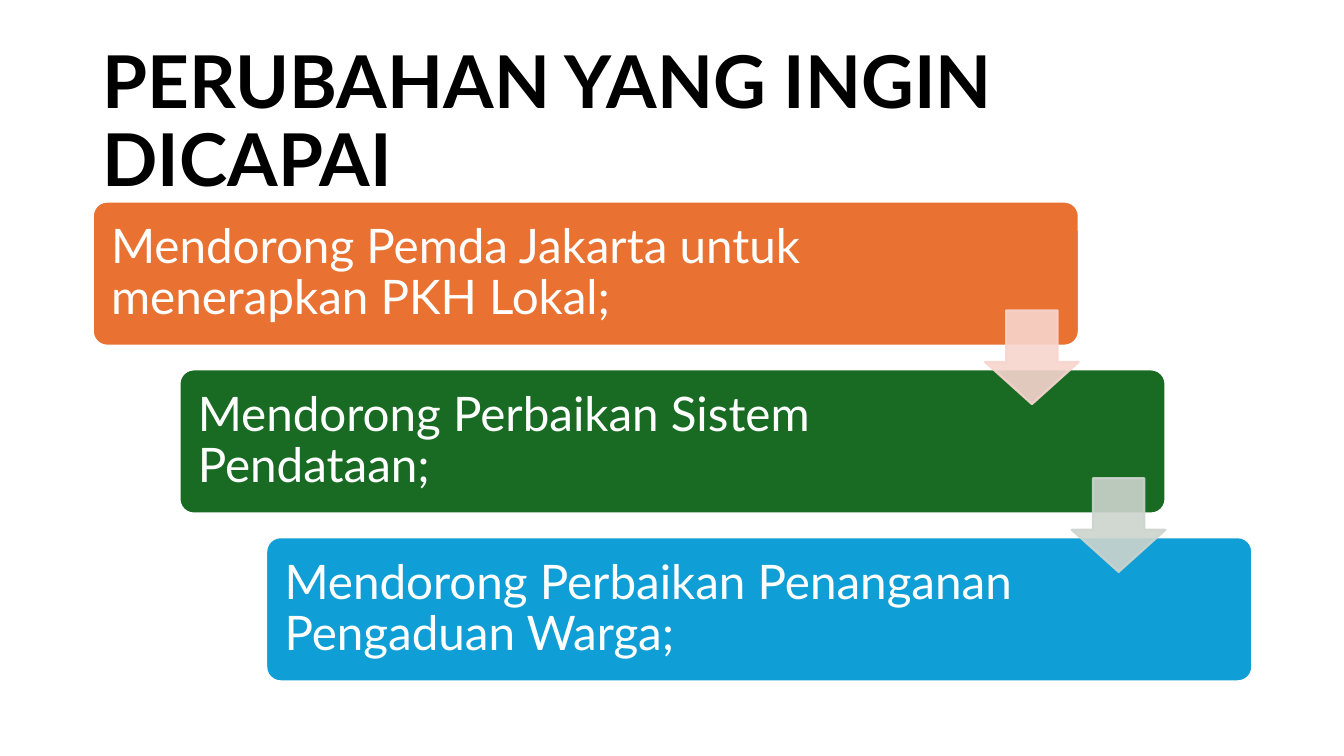
from lxml import etree
from pptx import Presentation
from pptx.dml.color import RGBColor
from pptx.enum.shapes import MSO_SHAPE
from pptx.enum.text import MSO_ANCHOR, PP_ALIGN
from pptx.oxml.ns import qn
from pptx.util import Inches, Pt

ROUND, ARROW = MSO_SHAPE.ROUNDED_RECTANGLE, MSO_SHAPE.DOWN_ARROW
MIDDLE, LEFT = MSO_ANCHOR.MIDDLE, PP_ALIGN.LEFT


def paint(shape, color, edge, alpha=100):
    shape.shadow.inherit = False
    shape.fill.solid()
    shape.fill.fore_color.rgb = RGBColor.from_string(color)
    shape.line.color.rgb = RGBColor.from_string(edge)
    shape.line.width = Pt(1.5)
    if alpha < 100:
        for tint in shape._element.spPr.iter(qn("a:srgbClr")):
            etree.SubElement(tint, qn("a:alpha")).set("val", str(alpha * 1000))


def write(shape, text, size, color, bold=False):
    frame = shape.text_frame
    frame.word_wrap = True
    frame.vertical_anchor = MIDDLE
    frame.text = text
    para = frame.paragraphs[0]
    para.alignment = LEFT
    para.line_spacing = 0.9
    font = para.runs[0].font
    font.name, font.size, font.bold = "Lato", Pt(size), bold
    font.color.rgb = RGBColor.from_string(color)


deck = Presentation()
deck.slide_width, deck.slide_height = Inches(13.33), Inches(7.5)
slide = deck.slides.add_slide(deck.slide_layouts[6])
shapes = slide.shapes

# Grid of the staircase
left, top = 0.92, 2
wide, high = 9.78, 1.43
step_x, step_y = 0.86, 1.665
side = 0.93

# Title
title = shapes.add_textbox(Inches(left), Inches(0.61), Inches(11.5), Inches(1.24))
write(title, "PERUBAHAN YANG INGIN DICAPAI", 52, "000000", True)

# Steps
steps = [
    ("Mendorong Pemda Jakarta untuk menerapkan PKH Lokal;", "E97132"),
    ("Mendorong Perbaikan Sistem Pendataan;", "196B24"),
    ("Mendorong Perbaikan Penanganan Pengaduan Warga;", "0F9ED5"),
]
for i, (text, color) in enumerate(steps):
    card = shapes.add_shape(ROUND, Inches(left + i * step_x), Inches(top + i * step_y),
                            Inches(wide), Inches(high))
    card.adjustments[0] = 0.1
    paint(card, color, "FFFFFF")
    write(card, text, 34, "FFFFFF")
    frame = card.text_frame
    frame.margin_left = frame.margin_top = frame.margin_bottom = Inches(0.14)
    frame.margin_right = Inches(1.94)  # room for the arrow

# Arrows from each step to the next
for i, color in enumerate(["F7D5CE", "CCD4CD"]):
    arrow = shapes.add_shape(ARROW, Inches(left + wide - side + i * step_x),
                             Inches(top + 1.08 + i * step_y), Inches(side), Inches(side))
    arrow.adjustments[0], arrow.adjustments[1] = 0.55, 0.45
    paint(arrow, color, color, 90)

deck.save("out.pptx")
